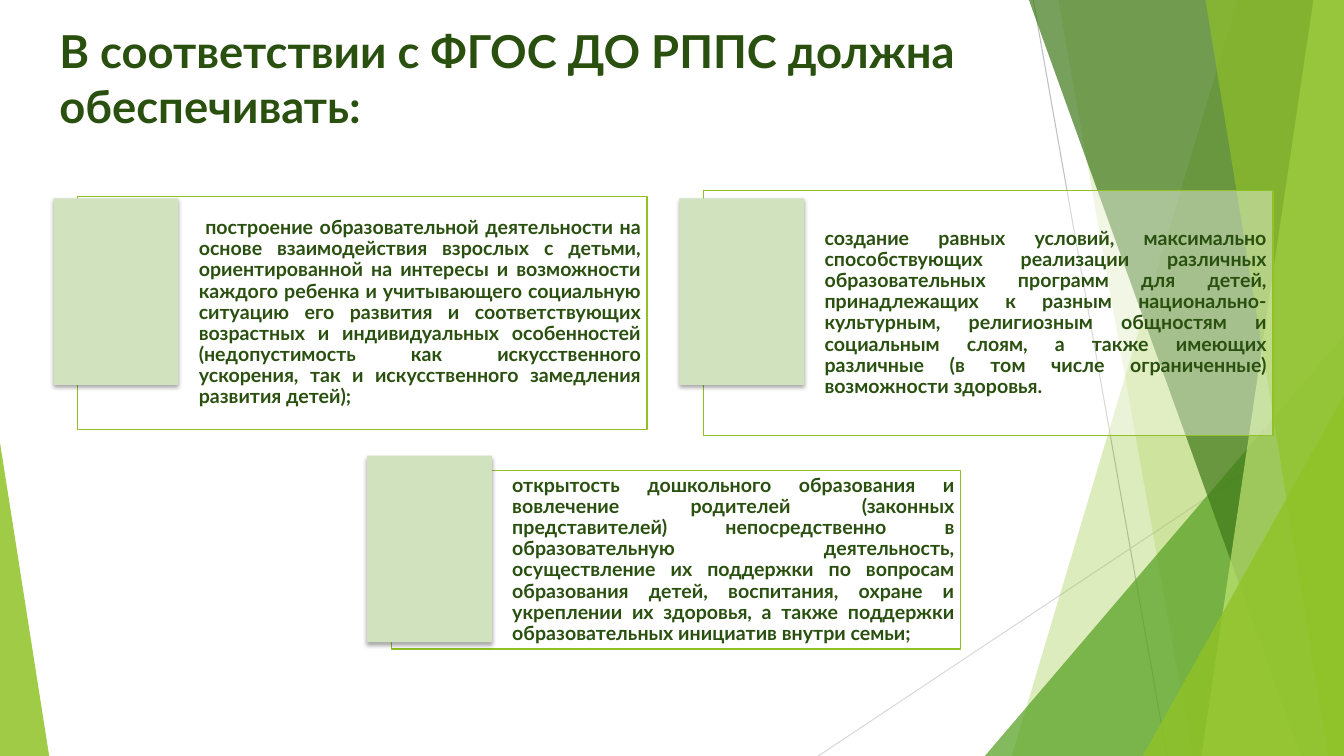
import pptx
import pptx.dml.color
import pptx.enum.shapes
import pptx.enum.text
import pptx.oxml
import pptx.util
from lxml import etree

Cm, Pt = pptx.util.Cm, pptx.util.Pt
Shape = pptx.enum.shapes.MSO_SHAPE
Anchor = pptx.enum.text.MSO_ANCHOR
Align = pptx.enum.text.PP_ALIGN
WIDTH, HEIGHT = 33.87, 19.05

COLORS = {
    "white": "FFFFFF", "lime": "90C226", "grass": "54A021", "forest": "3F7819",
    "pale": "C0E474", "tile": "D1E3BE", "ink": "2A5010",
    "grey": "BFBFBF", "light grey": "D9D9D9", "black": "000000",
}

RAYS = [
    ((26.04, 0), (29.41, HEIGHT), "grey"),
    ((WIDTH, 10.24), (20.62, HEIGHT), "light grey"),
]
BACK_RIBBONS = [(31.19, 25.5, "lime", 30), (26.67, 30.05, "lime", 20)]
FRONT_RIBBONS = [
    (25.93, 32.79, "forest", 70),
    (33.1, 30.28, "pale", 70),
    (30.38, 33.48, "lime", 65),
]
TITLE = "В соответствии с ФГОС ДО РППС должна обеспечивать:"
CARDS = [
    (1.96, 4.95, 5.87, 5.0,
     " построение образовательной деятельности на основе взаимодействия взрослых с детьми, "
     "ориентированной на интересы и возможности каждого ребенка и учитывающего социальную "
     "ситуацию его развития и соответствующих возрастных и индивидуальных особенностей "
     "(недопустимость как искусственного ускорения, так и искусственного замедления "
     "развития детей);"),
    (17.73, 4.8, 6.17, 5.0,
     "создание равных условий, максимально способствующих реализации различных "
     "образовательных программ для детей, принадлежащих к разным национально-культурным, "
     "религиозным общностям и социальным слоям, а также имеющих различные (в том числе "
     "ограниченные) возможности здоровья."),
    (9.86, 11.86, 4.5, 11.48,
     "открытость дошкольного образования и вовлечение родителей (законных представителей) "
     "непосредственно в образовательную деятельность, осуществление их поддержки по "
     "вопросам образования детей, воспитания, охране и укреплении их здоровья, а также "
     "поддержки образовательных инициатив внутри семьи;"),
]


class Painter:
    """Draws the elements of a page in one green style."""

    def __init__(self, page):
        self.page = page
        self.shapes = page.shapes
        self.font = {"name": "Lato", "bold": True}

    def color(self, name):
        return pptx.dml.color.RGBColor.from_string(COLORS[name])

    def apply(self, target, values):
        for name, value in values.items():
            setattr(target, name, value)

    def paint(self, shape, color, opacity=100):
        shape.shadow.inherit = False
        shape.fill.solid()
        shape.fill.fore_color.rgb = self.color(color)
        shape.line.fill.background()
        if opacity < 100:
            tint = shape.element.xpath("./p:spPr/a:solidFill/a:srgbClr")[0]
            etree.SubElement(tint, pptx.oxml.ns.qn("a:alpha"), val=str(opacity * 1000))
        return shape

    def block(self, kind, left, top, width, height, color, opacity=100):
        shape = self.shapes.add_shape(kind, Cm(left), Cm(top), Cm(width), Cm(height))
        return self.paint(shape, color, opacity)

    def triangle(self, left, top, width, peak, color, opacity):
        kind = Shape.ISOSCELES_TRIANGLE
        shape = self.block(kind, left, top, width, HEIGHT - top, color, opacity)
        shape.adjustments[0] = peak

    def ribbon(self, top_left, bottom_left, color, opacity):
        outline = self.shapes.build_freeform(Cm(top_left), 0)
        corners = [(WIDTH, 0), (WIDTH, HEIGHT), (bottom_left, HEIGHT)]
        outline.add_line_segments([(Cm(x), Cm(y)) for x, y in corners], close=True)
        self.paint(outline.convert_to_shape(), color, opacity)

    def ray(self, start, end, color):
        kind = pptx.enum.shapes.MSO_CONNECTOR.STRAIGHT
        line = self.shapes.add_connector(kind, *[Cm(value) for value in start + end])
        line.line.color.rgb = self.color(color)
        line.line.width = Pt(0.75)
        etree.SubElement(line.element.spPr, pptx.oxml.ns.qn("a:effectLst"))

    def set_text(self, shape, text, size, frame_format, para_format):
        frame = shape.text_frame
        self.apply(frame, {"word_wrap": True, **frame_format})
        para = frame.paragraphs[0]
        self.apply(para, para_format)
        span = para.add_run()
        span.text = text
        self.apply(span.font, {**self.font, "size": Pt(size)})
        span.font.color.rgb = self.color("ink")

    def title(self, text):
        box = self.shapes.title
        self.shapes.element.append(box.element)
        self.apply(box, {"left": Cm(1.24), "top": Cm(0.46),
                         "width": Cm(25.4), "height": Cm(2.31)})
        self.set_text(box, text, 32.4,
                      {"vertical_anchor": Anchor.TOP,
                       "auto_size": pptx.enum.text.MSO_AUTO_SIZE.NONE},
                      {"alignment": Align.LEFT})

    def drop_shadow(self, shape):
        qn = pptx.oxml.ns.qn
        effects = shape.element.spPr.find(qn("a:effectLst"))
        shadow = etree.SubElement(effects, qn("a:outerShdw"), blurRad=str(int(Pt(3))),
                                  dist=str(int(Pt(2))), dir="5400000", rotWithShape="0")
        tint = etree.SubElement(shadow, qn("a:srgbClr"), val=COLORS["black"])
        etree.SubElement(tint, qn("a:alpha"), val="35000")

    def card(self, left, top, height, tile_top, text):
        panel = self.block(Shape.RECTANGLE, left, top, 14.35, height, "white", 40)
        panel.line.color.rgb = self.color("lime")
        panel.line.width = Pt(1)
        margin = Cm(0.15)
        self.set_text(panel, text, 14,
                      {"vertical_anchor": Anchor.MIDDLE, "margin_left": Cm(3.05),
                       "margin_right": margin, "margin_top": margin,
                       "margin_bottom": margin},
                      {"alignment": Align.JUSTIFY, "line_spacing": 0.9})
        tile = self.block(Shape.RECTANGLE, left - 0.61, tile_top, 3.15, 4.7, "tile")
        self.drop_shadow(tile)


def main():
    deck = pptx.Presentation()
    deck.slide_width, deck.slide_height = Cm(WIDTH), Cm(HEIGHT)
    painter = Painter(deck.slides.add_slide(deck.slide_layouts[5]))
    for ray in RAYS:
        painter.ray(*ray)
    for ribbon in BACK_RIBBONS:
        painter.ribbon(*ribbon)
    painter.triangle(24.82, 8.46, 9.05, 1, "grass", 72)
    for ribbon in FRONT_RIBBONS:
        painter.ribbon(*ribbon)
    painter.triangle(28.8, 9.98, 5.07, 1, "lime", 80)
    painter.triangle(0, 11.15, 1.24, 0, "lime", 85)
    painter.title(TITLE)
    for card in CARDS:
        painter.card(*card)
    deck.save("out.pptx")


if __name__ == "__main__":
    main()
